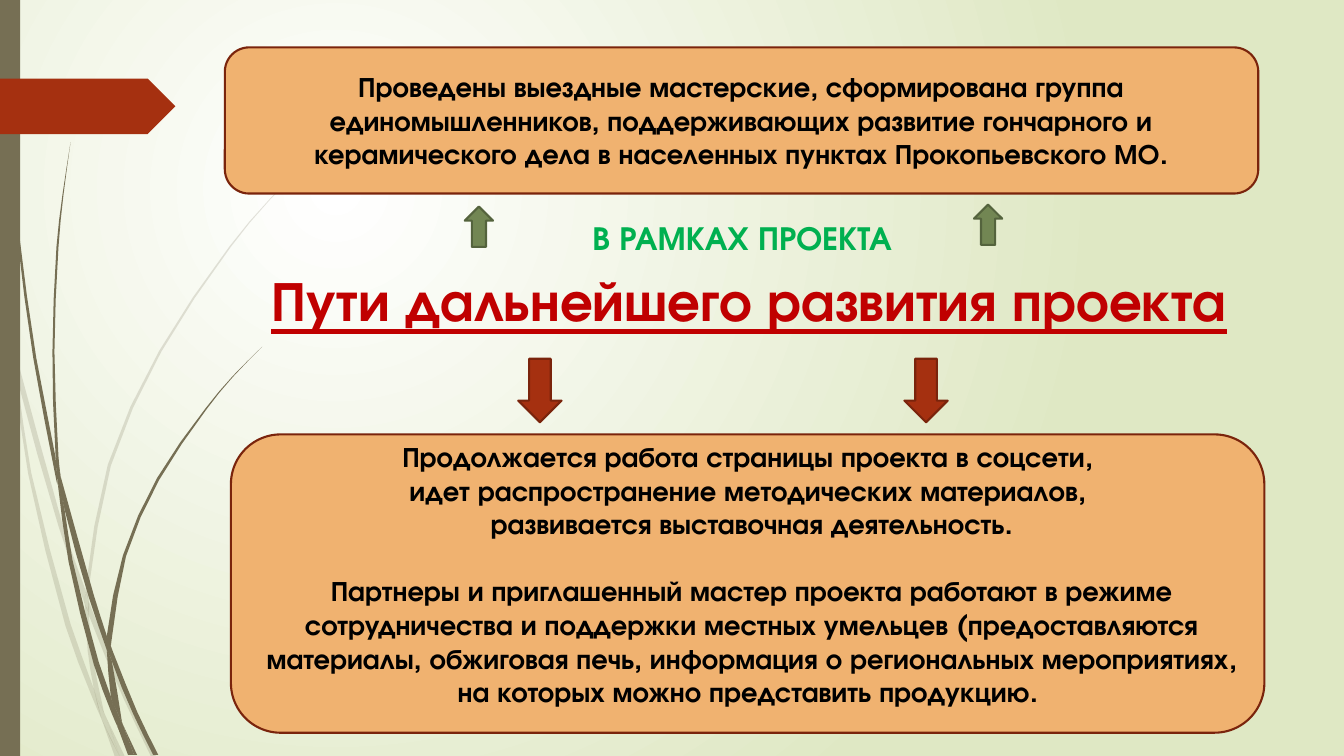
import math
from dataclasses import dataclass

import pptx
import pptx.dml.color
import pptx.enum.shapes
import pptx.enum.text
import pptx.oxml
import pptx.oxml.ns
import pptx.util
from lxml import etree

PX = 9144  # EMU in one px, 100 px to the inch
FONT = "TeX Gyre Adventor"
OLIVE, RUST, DARK_RUST, SAND = "766F54", "A53010", "7A240C", "F0B270"
GREEN, DARK_GREEN = "728653", "54633D"
KIND = pptx.enum.shapes.MSO_SHAPE
Point = tuple[float, float]
Box = tuple[int, int, int, int]


@dataclass
class Blade:
    """A piece of grass between two smooth edges, both read downwards."""
    left: list[Point]
    right: list[Point]


@dataclass
class Block:
    box: Box
    kind: int
    fill: str
    line: str | None = None


@dataclass
class Caption:
    box: Box
    lines: list[str]
    size: int
    color: str
    gap_before_last: int = 0


PALE_BLADES = [
    Blade([(0, 299), (10, 344), (11, 350)], [(0, 282), (9, 322), (11, 350)]),
    Blade([(14, 345), (17, 376), (58, 522), (84, 599)], [(14, 345), (62, 520), (85, 586)]),
    Blade([(88, 596), (88, 610), (123, 694), (150, 751)],
          [(88, 596), (92, 607), (127, 692), (155, 751)]),
    Blade([(105, 711), (119, 751)], [(105, 711), (124, 751)]),
    Blade([(11, 350), (28, 470), (65, 621), (92, 693), (101, 714)],
          [(11, 350), (17, 376), (31, 469), (70, 619), (93, 683), (101, 714)]),
    Blade([(84, 599), (87, 646), (93, 683), (96, 692), (105, 711)],
          [(84, 599), (88, 608), (91, 646), (103, 706), (105, 711)]),
    Blade([(312, 153), (268, 197), (228, 244), (158, 348), (107, 461), (85, 584), (88, 596)],
          [(312, 154), (268, 198), (229, 245), (160, 349), (110, 462), (88, 584), (88, 596)]),
    Blade([(101, 714), (114, 751)], [(101, 714), (119, 751)]),
    Blade([(85, 586), (84, 599), (88, 608)], [(85, 586), (88, 596), (88, 610)]),
    Blade([(93, 683), (101, 714), (119, 751)], [(93, 683), (96, 692), (105, 711), (119, 751)]),
]
DARK_BLADES = [
    Blade([(3, 0), (4, 48), (7, 110), (17, 233), (33, 355), (56, 477), (57, 481)],
          [(4, 0), (5, 48), (8, 109), (19, 232), (36, 355), (55, 453), (57, 481)]),
    Blade([(60, 472), (64, 505), (88, 592), (106, 645)], [(60, 472), (93, 590), (106, 631)]),
    Blade([(110, 641), (111, 656), (132, 708), (152, 749)],
          [(110, 641), (113, 649), (136, 706), (157, 749)]),
    Blade([(57, 477), (68, 557), (93, 659), (111, 708), (117, 722)],
          [(57, 477), (64, 505), (72, 556), (98, 657), (110, 691), (117, 722)]),
    Blade([(70, 141), (62, 193), (56, 245), (52, 349), (55, 449), (60, 472)],
          [(70, 141), (63, 193), (58, 245), (54, 349), (58, 453), (60, 472)]),
    Blade([(122, 719), (133, 749)], [(122, 719), (136, 749)]),
    Blade([(55, 449), (57, 477), (64, 505)], [(55, 449), (60, 472), (64, 505)]),
    Blade([(260, 344), (231, 373), (204, 405), (156, 474), (122, 551), (106, 631), (110, 641)],
          [(260, 344), (231, 374), (205, 406), (158, 476), (125, 552), (111, 633), (110, 641)]),
    Blade([(117, 722), (127, 749)], [(117, 722), (131, 749)]),
    Blade([(106, 645), (110, 691), (116, 706), (122, 719)],
          [(106, 645), (111, 656), (121, 716), (122, 719)]),
    Blade([(106, 631), (106, 645), (109, 651)], [(106, 631), (110, 641), (111, 656)]),
    Blade([(110, 691), (117, 722), (130, 749)], [(110, 691), (116, 706), (122, 719), (133, 749)]),
]

BLOCKS = [
    Block((0, 0, 20, 750), KIND.RECTANGLE, OLIVE),
    Block((0, 78, 174, 55), KIND.PENTAGON, RUST),
    Block((229, 431, 1025, 296), KIND.ROUNDED_RECTANGLE, SAND, DARK_RUST),
    Block((223, 47, 1025, 145), KIND.ROUNDED_RECTANGLE, SAND, DARK_RUST),
    Block((514, 356, 43, 63), KIND.DOWN_ARROW, RUST, DARK_RUST),
    Block((897, 356, 43, 63), KIND.DOWN_ARROW, RUST, DARK_RUST),
    Block((461, 205, 28, 40), KIND.UP_ARROW, GREEN, DARK_GREEN),
    Block((966, 203, 28, 40), KIND.UP_ARROW, GREEN, DARK_GREEN),
]

TITLE = Caption((163, 258, 1160, 108), ["Пути дальнейшего развития проекта"], 40, "C00000")
CAPTIONS = [
    Caption((243, 64, 984, 111), [
        "Проведены выездные мастерские, сформирована группа единомышленников, "
        "поддерживающих развитие гончарного и керамического дела в населенных "
        "пунктах Прокопьевского МО."], 20, "000000"),
    Caption((514, 210, 444, 50), ["В РАМКАХ ПРОЕКТА"], 24, "00B050"),
    Caption((243, 431, 1005, 279), [
        "Продолжается работа страницы проекта в соцсети, ",
        "идет распространение методических материалов, ",
        "развивается выставочная деятельность.",
        "Партнеры и приглашенный мастер проекта работают в режиме сотрудничества "
        "и поддержки местных умельцев (предоставляются материалы, обжиговая печь, "
        "информация о региональных мероприятиях, на которых можно представить "
        "продукцию. "], 20, "000000", gap_before_last=24),
]


def rgb(color: str) -> pptx.dml.color.RGBColor:
    return pptx.dml.color.RGBColor.from_string(color)


def emu(box: tuple[int, ...]) -> list[int]:
    return [length * PX for length in box]


def smooth(points: list[Point]) -> list[Point]:
    """Add the middle of a Hermite curve between each two points."""
    def slope(index: int) -> Point:
        before, after = points[max(index - 1, 0)], points[min(index + 1, len(points) - 1)]
        length = math.dist(before, points[index]) + math.dist(points[index], after)
        return (after[0] - before[0]) / length, (after[1] - before[1]) / length

    curve = [points[0]]
    for index, (start, end) in enumerate(zip(points, points[1:])):
        pull = math.dist(start, end) / 8
        middle = tuple((a + b) / 2 + (u - v) * pull for a, b, u, v in
                       zip(start, end, slope(index), slope(index + 1)))
        curve += [middle, end]
    return curve


def paint(shape, fill: str, line: str | None = None) -> None:
    shape.shadow.inherit = False
    shape.fill.solid()
    shape.fill.fore_color.rgb = rgb(fill)
    if line:
        shape.line.color.rgb = rgb(line)
        shape.line.width = pptx.util.Pt(1.5)
    else:
        shape.line.fill.background()


def draw_background(slide) -> None:
    fill = slide.background.fill
    fill.gradient()
    for stop, color in zip(fill.gradient_stops, ("FFFFFF", "DFE8C4")):
        stop.color.rgb = rgb(color)
    linear = slide.element.find(".//" + pptx.oxml.ns.qn("a:lin"))
    circle = pptx.oxml.parse_xml(
        f'<a:path {pptx.oxml.ns.nsdecls("a")} path="circle">'
        '<a:fillToRect l="50000" t="50000" r="100000" b="100000"/></a:path>')
    linear.getparent().replace(linear, circle)


def draw_blade(slide, blade: Blade, opacity: int) -> None:
    outline = [(round(x * PX), round(y * PX))
               for x, y in smooth(blade.left) + smooth(blade.right)[::-1]]
    builder = slide.shapes.build_freeform(*outline[0], scale=1.0)
    builder.add_line_segments(outline[1:], close=True)
    shape = builder.convert_to_shape()
    paint(shape, OLIVE)
    if opacity < 100:
        color = shape.element.spPr.find(".//" + pptx.oxml.ns.qn("a:srgbClr"))
        etree.SubElement(color, pptx.oxml.ns.qn("a:alpha")).set("val", str(opacity * 1000))


def write(shape, caption: Caption, underline: bool = False) -> None:
    shape.left, shape.top, shape.width, shape.height = emu(caption.box)
    frame = shape.text_frame
    frame.word_wrap = True
    frame.auto_size = pptx.enum.text.MSO_AUTO_SIZE.NONE
    frame.vertical_anchor = pptx.enum.text.MSO_ANCHOR.TOP
    frame.text = "\n".join(caption.lines)
    for paragraph in frame.paragraphs:
        paragraph.alignment = pptx.enum.text.PP_ALIGN.CENTER
        font = paragraph.font
        font.name, font.size, font.bold = FONT, pptx.util.Pt(caption.size), True
        font.color.rgb = rgb(caption.color)
        if underline:
            font.underline = True
    if caption.gap_before_last:
        frame.paragraphs[-1].space_before = pptx.util.Pt(caption.gap_before_last)


def main() -> None:
    presentation = pptx.Presentation()
    presentation.slide_width, presentation.slide_height = emu((1333, 750))
    slide = presentation.slides.add_slide(presentation.slide_layouts.get_by_name("Title Only"))
    # Backdrop and grass
    draw_background(slide)
    for blades, opacity in ((PALE_BLADES, 20), (DARK_BLADES, 100)):
        for blade in blades:
            draw_blade(slide, blade, opacity)
    # Side bar, tag, cards and arrows
    for block in BLOCKS:
        paint(slide.shapes.add_shape(block.kind, *emu(block.box)), block.fill, block.line)
    # Title and texts
    write(slide.shapes.title, TITLE, underline=True)
    for caption in CAPTIONS:
        write(slide.shapes.add_textbox(*emu(caption.box)), caption)
    presentation.save("out.pptx")


if __name__ == "__main__":
    main()
